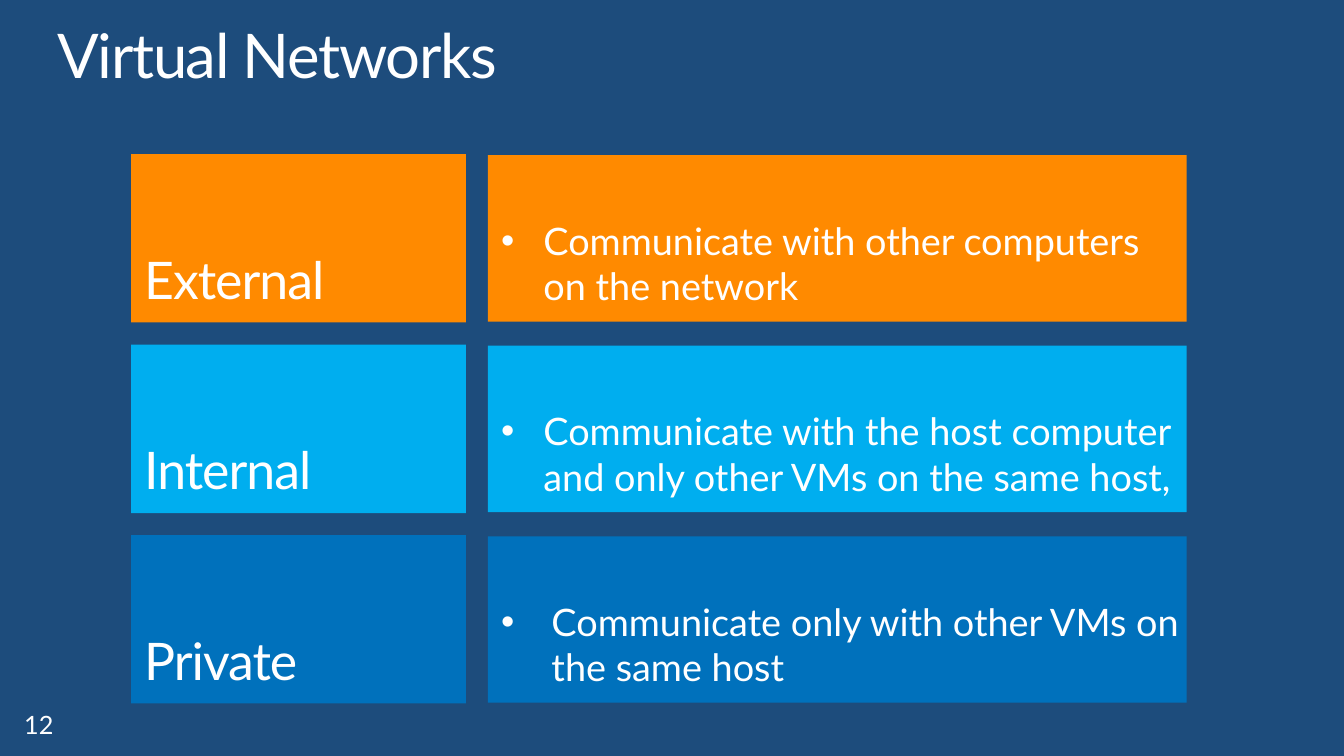
"""Build the Virtual Networks slide: three network types and what each can reach."""
from pptx import Presentation
from pptx.dml.color import RGBColor
from pptx.enum.shapes import MSO_SHAPE
from pptx.enum.text import MSO_ANCHOR, MSO_AUTO_SIZE, PP_ALIGN
from pptx.oxml.ns import qn
from pptx.util import Inches, Pt
from lxml.etree import SubElement

THEME = {
    "font": "Lato",
    "text": RGBColor.from_string("FFFFFF"),
    "background": RGBColor.from_string("1D4C7C"),
    "orange": RGBColor.from_string("FF8A00"),
    "cyan": RGBColor.from_string("00AEEF"),
    "blue": RGBColor.from_string("0071BC"),
    "title": {"size": 44, "tracking": -100},
    "label": {"size": 37, "tracking": -70},
    "detail": {"size": 27, "tracking": 0},
    "number": {"size": 18, "tracking": 0},
}
TILE_INSETS = (0.13, 0.07, 0.07, 0.13)


def write_text(box, text, style, insets, anchor=MSO_ANCHOR.TOP, indent=0):
    frame = box.text_frame
    left, top, right, bottom = map(Inches, insets)
    frame_format = {
        "word_wrap": True, "auto_size": MSO_AUTO_SIZE.NONE, "vertical_anchor": anchor,
        "margin_left": left, "margin_top": top,
        "margin_right": right, "margin_bottom": bottom,
    }
    for name, value in frame_format.items():
        setattr(frame, name, value)
    para = frame.paragraphs[0]
    para.alignment = PP_ALIGN.LEFT
    if indent:
        properties = para._p.get_or_add_pPr()
        properties.set("marL", str(Inches(indent)))
        properties.set("indent", str(-Inches(indent)))
        SubElement(properties, qn("a:buFont")).set("typeface", "Arial")
        SubElement(properties, qn("a:buChar")).set("char", "•")
    span = para.add_run()
    span.text = text
    span.font.color.rgb = THEME["text"]
    for name, value in {"name": THEME["font"], "size": Pt(THEME[style]["size"])}.items():
        setattr(span.font, name, value)
    span._r.get_or_add_rPr().set("spc", str(THEME[style]["tracking"]))
    return para


def add_tile(page, left, top, width, height, color):
    tile = page.shapes.add_shape(MSO_SHAPE.RECTANGLE, *map(Inches, (left, top, width, height)))
    tile.shadow.inherit = False
    tile.fill.solid()
    tile.fill.fore_color.rgb = color
    tile.line.fill.background()
    return tile


deck = Presentation()
deck.slide_width, deck.slide_height = Inches(13.33), Inches(7.5)
page = deck.slides.add_slide(deck.slide_layouts[5])
page.background.fill.solid()
page.background.fill.fore_color.rgb = THEME["background"]

title = page.shapes.title
title_place = {"left": 0.57, "top": 0.25, "width": 12.19, "height": 0.67}
for name, value in title_place.items():
    setattr(title, name, Inches(value))
write_text(title, "Virtual Networks", "title", (0, 0, 0, 0)).line_spacing = 0.9

number = page.shapes.add_textbox(Inches(0.11), Inches(6.97), Inches(3.11), Inches(0.4))
write_text(number, "12", "number", (0.13, 0.07, 0.13, 0.07))

networks = [
    ("External", "Communicate with other computers on the network", "orange", 0.42),
    ("Internal", "Communicate with the host computer and only other VMs on the same host,",
     "cyan", 0.42),
    ("Private", "Communicate only with other VMs on the same host", "blue", 0.5),
]
for row, (label, detail, color, indent) in enumerate(networks):
    top = 1.53 + 1.89 * row
    detail_tile = add_tile(page, 4.84, top + 0.01, 6.93, 1.65, THEME[color])
    write_text(detail_tile, detail, "detail", TILE_INSETS, MSO_ANCHOR.BOTTOM, indent)
    label_tile = add_tile(page, 1.3, top, 3.32, 1.67, THEME[color])
    write_text(label_tile, label, "label", TILE_INSETS, MSO_ANCHOR.BOTTOM)

deck.save("out.pptx")
